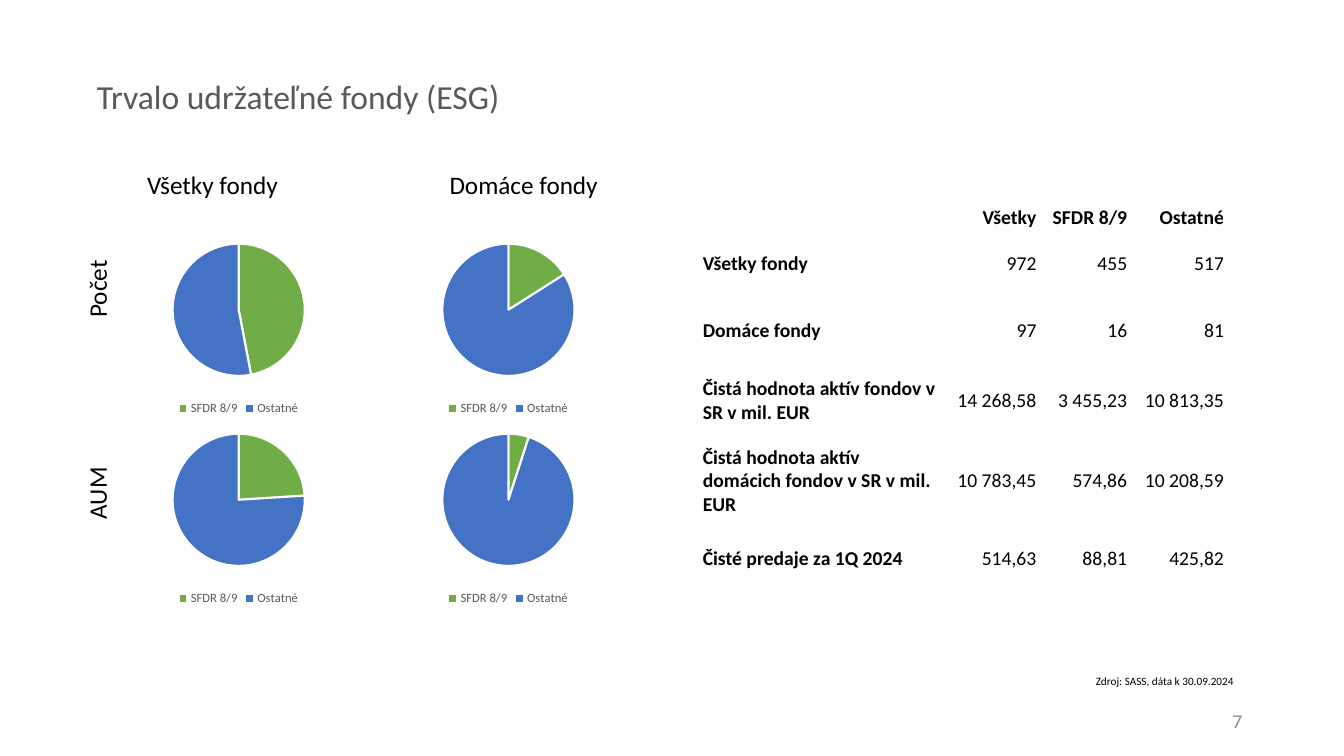
from pptx import Presentation
from pptx.chart.data import CategoryChartData
from pptx.dml.color import RGBColor
from pptx.enum import chart as ch, text as t
from pptx.oxml import parse_xml
from pptx.oxml.ns import nsdecls
from pptx.util import Inches, Pt

FONT = "Calibri"
BLACK, GREY, LIGHT_GREY, WHITE = "000000", "595959", "8C8C8C", "FFFFFF"
SLICES = ["70AD47", "4472C4"]
CATEGORIES = ["SFDR 8/9", "Ostatné"]
SHARES = [[(47, 53), (16, 84)],
          [(24, 76), (5, 95)]]
HEADER = ["", "Všetky", "SFDR 8/9", "Ostatné"]
ROWS = [
    ["Všetky fondy", "972", "455", "517"],
    ["Domáce fondy", "97", "16", "81"],
    ["Čistá hodnota aktív fondov v SR v mil. EUR", "14 268,58", "3 455,23", "10 813,35"],
    ["Čistá hodnota aktív domácich fondov v SR v mil. EUR", "10 783,45", "574,86", "10 208,59"],
    ["Čisté predaje za 1Q 2024", "514,63", "88,81", "425,82"],
]


def rgb(hex_color):
    return RGBColor.from_string(hex_color)


def style(font, size, color, bold=False):
    font.name, font.size, font.bold = FONT, Pt(size), bold
    font.color.rgb = rgb(color)


def write(p, content, size, color=BLACK, bold=False, align=t.PP_ALIGN.LEFT):
    p.alignment = align
    r = p.add_run()
    r.text = content
    style(r.font, size, color, bold)


def add_title(s, box, content):
    sp = s.shapes.title
    sp.left, sp.top, sp.width, sp.height = map(Inches, box)
    tf = sp.text_frame
    tf.auto_size = t.MSO_AUTO_SIZE.NONE
    tf.vertical_anchor = t.MSO_ANCHOR.MIDDLE
    p = tf.paragraphs[0]
    p.line_spacing = 0.9
    write(p, content, 24, GREY)


def add_label(s, box, content, size, color=BLACK, align=t.PP_ALIGN.LEFT,
              anchor=t.MSO_ANCHOR.TOP, tab=None, rotation=0):
    sp = s.shapes.add_textbox(*map(Inches, box))
    sp.rotation = rotation
    tf = sp.text_frame
    tf.word_wrap = True
    tf.vertical_anchor = anchor
    p = tf.paragraphs[0]
    if tab:
        p._p.get_or_add_pPr().append(parse_xml(
            f'<a:tabLst {nsdecls("a")}><a:tab pos="{Inches(tab)}" algn="l"/></a:tabLst>'))
    write(p, content, size, color, align=align)


def add_pie(s, box, shares):
    data = CategoryChartData()
    data.categories = CATEGORIES
    data.add_series("Series 1", shares)
    chart = s.shapes.add_chart(ch.XL_CHART_TYPE.PIE, *map(Inches, box), data).chart
    style(chart.font, 10, BLACK)
    chart.has_title = False
    chart.has_legend = True
    chart.legend.position = ch.XL_LEGEND_POSITION.BOTTOM
    chart.legend.include_in_layout = False
    style(chart.legend.font, 9, GREY)
    plot = chart.plots[0]
    plot.vary_by_categories = True
    for i, color in enumerate(SLICES):
        fmt = plot.series[0].points[i].format
        fmt.fill.solid()
        fmt.fill.fore_color.rgb = rgb(color)
        fmt.line.color.rgb = rgb(WHITE)
        fmt.line.width = Pt(1.5)


def add_pie_grid(s, box):
    left, top, width, height = box
    w, h = width / 2, height / 2
    # Column and row headings
    add_label(s, (left + 0.33, top - 0.65, 5.85, 0.4),
              "Všetky fondy \tDomáce fondy", 18, tab=3)
    add_label(s, (left - 1.58, top + 1.26, 3.02, 0.4),
              "AUM\tPočet", 18, tab=2, rotation=270)
    # Pies
    for i, row in enumerate(SHARES):
        for j, shares in enumerate(row):
            add_pie(s, (left + j * w, top + i * h, w, h), shares)


def add_fund_table(s, box):
    rows = [HEADER] + ROWS
    tbl = s.shapes.add_table(len(rows), len(HEADER), *map(Inches, box)).table
    tbl.first_row = tbl.horz_banding = False
    for col, width in zip(tbl.columns, [2.35, 0.96, 0.9, 0.96]):
        col.width = Inches(width)
    for row, height in zip(tbl.rows, [0.65, 0.67, 0.67, 0.72, 0.87, 0.67]):
        row.height = Inches(height)
    for i, values in enumerate(rows):
        for j, value in enumerate(values):
            cell = tbl.cell(i, j)
            cell.fill.background()
            cell.margin_left = cell.margin_right = 0
            cell.margin_top = cell.margin_bottom = 0
            cell.vertical_anchor = t.MSO_ANCHOR.MIDDLE if i else t.MSO_ANCHOR.BOTTOM
            if value:
                write(cell.text_frame.paragraphs[0], value, 14, bold=i == 0 or j == 0,
                      align=t.PP_ALIGN.RIGHT if j else t.PP_ALIGN.LEFT)


def add_footer(s, box):
    left, top, width, height = box
    right = left + width
    # Source and page number share the right edge
    add_label(s, (right - 1.65, top, 1.65, 0.24), "Zdroj: SASS, dáta k 30.09.2024", 8)
    add_label(s, (left, top + height - 0.4, width, 0.4), "7", 14, LIGHT_GREY,
              t.PP_ALIGN.RIGHT, t.MSO_ANCHOR.MIDDLE)


def main():
    prs = Presentation()
    prs.slide_width, prs.slide_height = Inches(13.33), Inches(7.5)
    s = prs.slides.add_slide(prs.slide_layouts[5])
    add_title(s, (0.86, 0.25, 11.94, 1.45), "Trvalo udržateľné fondy (ESG)")
    add_pie_grid(s, (1.03, 2.28, 5.35, 3.77))
    add_fund_table(s, (6.97, 1.63, 5.17, 4.25))
    add_footer(s, (9.42, 6.64, 3, 0.71))
    prs.save("out.pptx")


if __name__ == "__main__":
    main()
